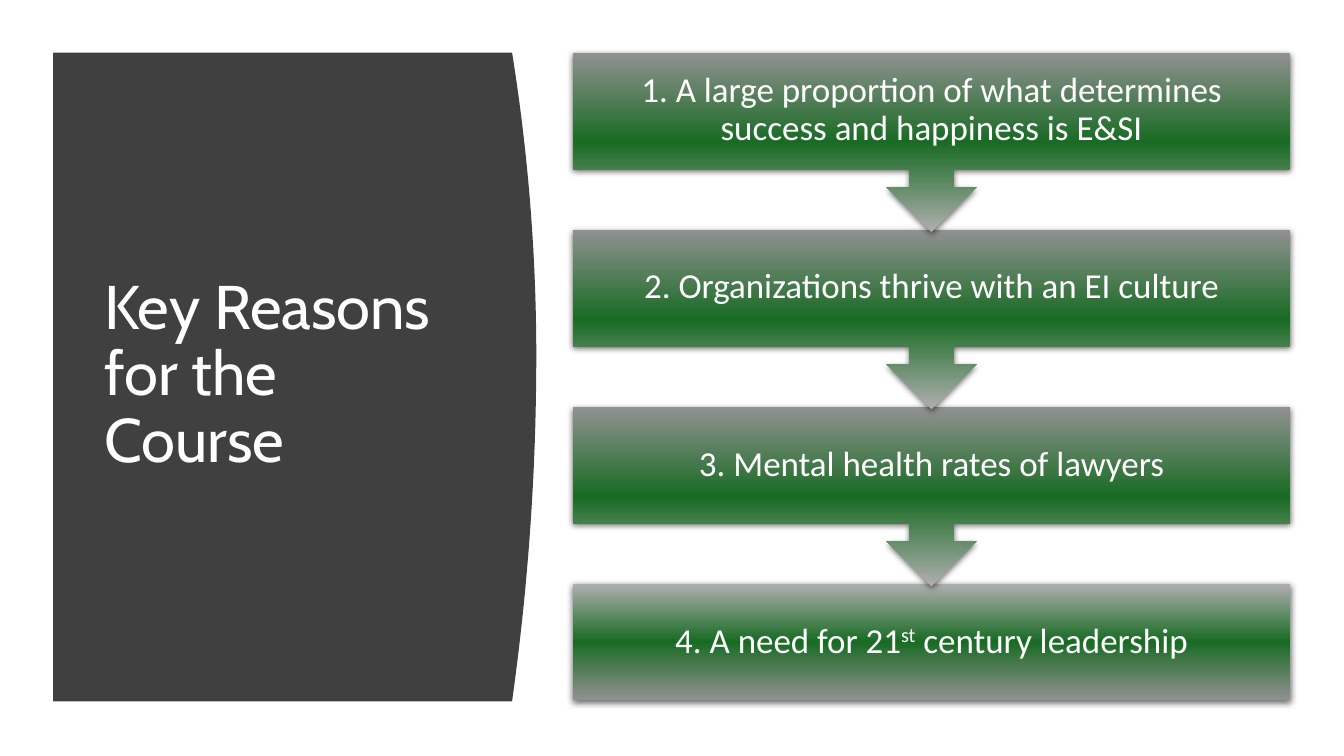
"""Build the slide with the key reasons for the course."""
from lxml import etree
from pptx import Presentation
from pptx.dml.color import RGBColor
from pptx.enum.shapes import MSO_SHAPE
from pptx.enum.text import MSO_ANCHOR, PP_ALIGN
from pptx.oxml import parse_xml
from pptx.util import Pt

RECT, CALLOUT = MSO_SHAPE.RECTANGLE, MSO_SHAPE.UP_ARROW_CALLOUT
MIDDLE = MSO_ANCHOR.MIDDLE
LEFT, CENTER = PP_ALIGN.LEFT, PP_ALIGN.CENTER
NS = "http://schemas.openxmlformats.org/drawingml/2006/main"

TITLE = "Key Reasons for the Course"
RAISED = "st"
STEPS = [
    ["1. A large proportion of what determines success and happiness is E&SI"],
    ["2. Organizations thrive with an EI culture"],
    ["3. Mental health rates of lawyers"],
    ["4. A need for 21", RAISED, " century leadership"],
]
THEME = {
    "panel": "404040",
    "text": "FFFFFF",
    "shadow": "000000",
    "stops": [(0, "AFAFAF"), (50, "196B24"), (100, "919191")],
    "title": ("Cabin", 44),
    "step": ("Calibri", 25),
}
PANEL = {"left": 38, "top": 37.5, "right": 365.8, "bottom": 501,
         "peak": 254, "bulge": 17.3}
TITLE_BOX = (67.5, 80, 269.5, 377)
STEP_X, STEP_Y, STEP_W, STEP_H = 409, 37.5, 512.6, 82.8
PITCH, CALL_H = 126.5, 128.2
ARROW = (0.25, 0.25, 0.25, 0.65)
CURVE = 40


def color(name):
    return RGBColor.from_string(THEME[name])


def add_panel(shapes):
    top, end, peak = PANEL["top"], PANEL["bottom"], PANEL["peak"]
    edge = []
    for i in range(CURVE + 1):
        y = top + (end - top) * i / CURVE
        span = peak - top if y < peak else end - peak
        x = PANEL["right"] + PANEL["bulge"] * (1 - ((y - peak) / span) ** 2)
        edge.append((Pt(x), Pt(y)))
    form = shapes.build_freeform(Pt(PANEL["left"]), Pt(top))
    form.add_line_segments(edge + [(Pt(PANEL["left"]), Pt(end))])
    panel = form.convert_to_shape()
    panel.shadow.inherit = False
    panel.fill.solid()
    panel.fill.fore_color.rgb = color("panel")
    panel.line.fill.background()


def add_text(shapes, box, parts, style, align, pads):
    frame = shapes.add_textbox(*map(Pt, box)).text_frame
    frame.word_wrap = True
    frame.vertical_anchor = MIDDLE
    frame.margin_left = frame.margin_right = Pt(pads[0])
    frame.margin_top = frame.margin_bottom = Pt(pads[1])
    para = frame.paragraphs[0]
    para.alignment, para.line_spacing = align, 0.9
    para.font.name, para.font.size = THEME[style][0], Pt(THEME[style][1])
    para.font.color.rgb = color("text")
    for part in parts:
        run = para.add_run()
        run.text = part
        if part == RAISED:
            run._r.get_or_add_rPr().set("baseline", "30000")


def paint(shape):
    shape.line.fill.background()
    props = shape._element.spPr
    stops = "".join(
        f'<a:gs pos="{pos * 1000}"><a:srgbClr val="{tone}"/></a:gs>'
        for pos, tone in THEME["stops"])
    grad = parse_xml(
        f'<a:gradFill xmlns:a="{NS}" rotWithShape="1"><a:gsLst>{stops}</a:gsLst>'
        '<a:lin ang="5400000" scaled="0"/></a:gradFill>')
    props.find(f"{{{NS}}}ln").addprevious(grad)
    glow = etree.SubElement(props, f"{{{NS}}}effectLst")
    glow.append(parse_xml(
        f'<a:outerShdw xmlns:a="{NS}" blurRad="{Pt(4.5)}" dist="{Pt(1.5)}" '
        'dir="5400000" algn="ctr" rotWithShape="0">'
        f'<a:srgbClr val="{THEME["shadow"]}"><a:alpha val="60000"/></a:srgbClr>'
        '</a:outerShdw>'))


def add_step(shapes, row, parts):
    top = STEP_Y + row * PITCH
    last = row == len(STEPS) - 1
    kind, high = (RECT, STEP_H) if last else (CALLOUT, CALL_H)
    shape = shapes.add_shape(kind, *map(Pt, (STEP_X, top, STEP_W, high)))
    if not last:
        shape.rotation = 180
        for i, value in enumerate(ARROW):
            shape.adjustments[i] = value
    paint(shape)
    box = (STEP_X, top, STEP_W, STEP_H)
    add_text(shapes, box, parts, "step", CENTER, (13.7, 13.7))


def main():
    deck = Presentation()
    deck.slide_width, deck.slide_height = Pt(960), Pt(540)
    shapes = deck.slides.add_slide(deck.slide_layouts[6]).shapes
    add_panel(shapes)
    add_text(shapes, TITLE_BOX, [TITLE], "title", LEFT, (7.2, 3.6))
    for row, parts in reversed(list(enumerate(STEPS))):
        add_step(shapes, row, parts)
    deck.save("out.pptx")


if __name__ == "__main__":
    main()
